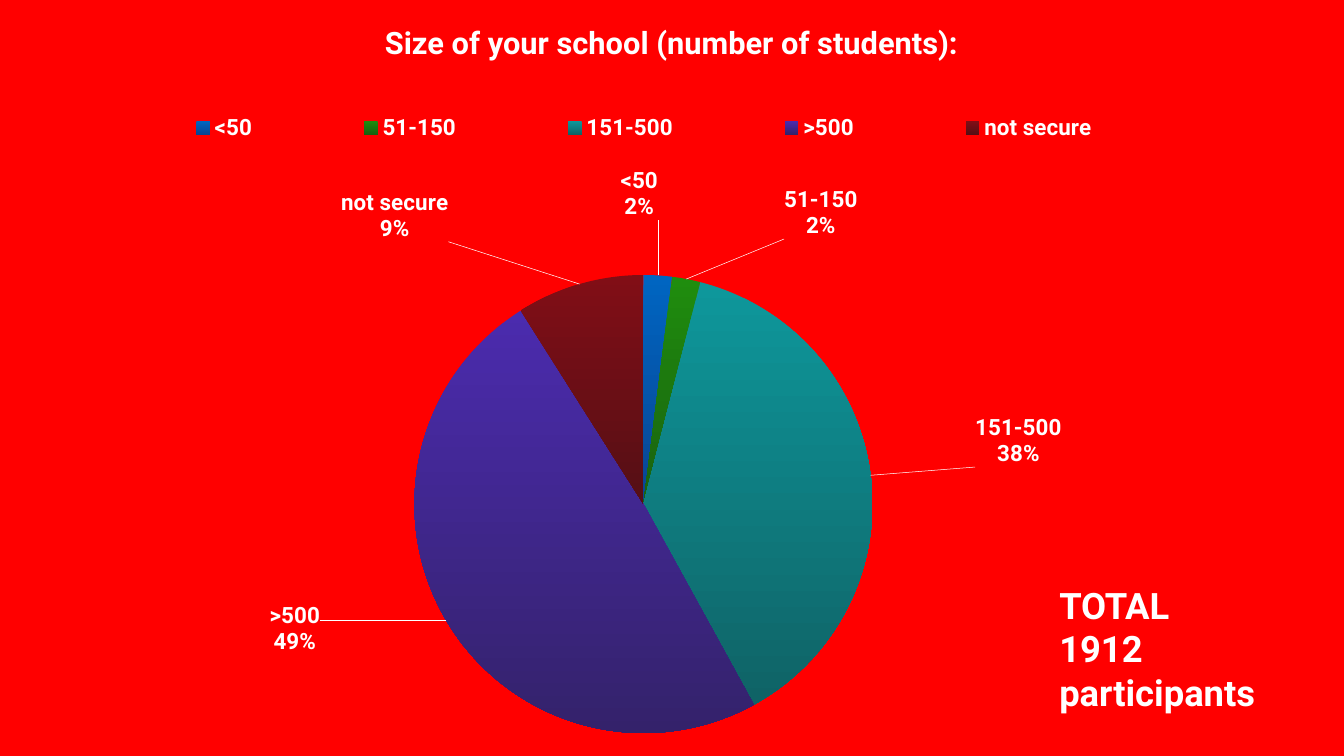
import copy

import pptx
import pptx.chart.data
import pptx.dml.color
import pptx.enum.chart
import pptx.enum.text
import pptx.oxml
import pptx.oxml.ns
import pptx.util
from pptx.util import Inches

FONT = "Roboto"
COLORS = {"background": "FF0000", "text": "FFFFFF"}
# category, percent, gradient from top to bottom, label shift as a part of the chart
SLICES = [
    ("<50", 2, ("0065C1", "094593"), (-0.017, -0.067)),
    ("51-150", 2, ("1F8D0E", "1A610F"), (0.088, -0.047)),
    ("151-500", 38, ("0E979B", "0F6366"), (0.092, -0.01)),
    (">500", 49, ("4B2BAE", "34226B"), (-0.112, -0.025)),
    ("not secure", 9, ("810E16", "550F15"), (-0.118, -0.05)),
]


def rgb(value):
    return pptx.dml.color.RGBColor.from_string(value)


def element(xml):
    """Parse chart XML written with the c: and a: prefixes."""
    tag, rest = xml[:-1].split(">", 1)
    declared = pptx.oxml.ns.nsdecls("c", "a")
    return pptx.oxml.parse_xml(f"{tag} {declared}>{rest}>")


def layout(x, y, w=None, h=None, inner=False, edge=True):
    parts = ['<c:layoutTarget val="inner"/>'] if inner else []
    if edge:
        parts += ['<c:xMode val="edge"/>', '<c:yMode val="edge"/>']
    for name, value in zip("xywh", (x, y, w, h)):
        if value is not None:
            parts.append(f'<c:{name} val="{value}"/>')
    return element(f"<c:layout><c:manualLayout>{''.join(parts)}</c:manualLayout></c:layout>")


class SlideBuilder:
    def __init__(self, slide):
        self.slide = slide

    def background(self, color):
        fill = self.slide.background.fill
        fill.solid()
        fill.fore_color.rgb = rgb(color)

    def style(self, font, size, bold=True):
        font.name = FONT
        font.size = pptx.util.Pt(size)
        font.bold = bold
        font.color.rgb = rgb(COLORS["text"])

    def text(self, box, lines, size, align, anchor):
        sp = self.slide.shapes.add_textbox(*map(Inches, box))
        tf = sp.text_frame
        tf.word_wrap = True
        tf.vertical_anchor = anchor
        tf.margin_left = tf.margin_right = Inches(0.06)
        tf.margin_top = tf.margin_bottom = Inches(0.06)
        for i, line in enumerate(lines):
            p = tf.add_paragraph() if i else tf.paragraphs[0]
            p.alignment = align
            r = p.add_run()
            r.text = line
            self.style(r.font, size)

    def pie(self, box, slices):
        data = pptx.chart.data.CategoryChartData()
        data.categories = [name for name, *_ in slices]
        data.add_series("Series 1", [value for _, value, *_ in slices])
        chart = self.slide.shapes.add_chart(
            pptx.enum.chart.XL_CHART_TYPE.PIE, *map(Inches, box), data).chart
        chart.has_title = False
        self.style(chart.font, 10, bold=False)
        plot = chart.plots[0]
        plot.vary_by_categories = True
        series = plot.series[0]
        for i, (_, _, gradient, _) in enumerate(slices):
            fmt = series.points[i].format
            fmt.line.fill.background()
            fmt.fill.gradient()
            fmt.fill.gradient_angle = 270
            for stop, color in zip(fmt.fill.gradient_stops, gradient):
                stop.color.rgb = rgb(color)
        self.legend(chart)
        self.pie_labels(chart, series.data_labels, [shift for *_, shift in slices])
        area = chart._chartSpace.xpath("c:chart/c:plotArea")[0]
        for old in area.xpath("c:layout"):
            area.remove(old)
        area.insert(0, layout(0.276, 0.211, 0.447, 0.58, inner=True))

    def legend(self, chart):
        chart.has_legend = True
        chart.legend.position = pptx.enum.chart.XL_LEGEND_POSITION.TOP
        chart.legend.include_in_layout = True
        self.style(chart.legend.font, 32)
        overlay = chart._chartSpace.xpath("c:chart/c:legend/c:overlay")[0]
        for old in chart._chartSpace.xpath("c:chart/c:legend/c:layout"):
            old.getparent().remove(old)
        overlay.addprevious(layout(0, 0, 1, 0.05))

    def pie_labels(self, chart, labels, shifts):
        """Show category and percent, each label moved off its slice with a leader line."""
        labels.show_value = False
        labels.show_category_name = True
        labels.show_percentage = True
        labels.number_format = "#,##0%"
        labels.number_format_is_linked = False
        labels.position = pptx.enum.chart.XL_LABEL_POSITION.OUTSIDE_END
        self.style(labels.font, 32)
        group = chart._chartSpace.xpath(".//c:ser/c:dLbls")[0]
        for old in group.xpath("c:showLeaderLines | c:leaderLines"):
            group.remove(old)
        group.append(element("<c:separator>\n</c:separator>"))
        shared = list(group)
        for i, (x, y) in enumerate(shifts):
            label = element(f'<c:dLbl><c:idx val="{i}"/></c:dLbl>')
            label.append(layout(x, y, edge=False))
            for child in shared:
                label.append(copy.deepcopy(child))
            group.insert(i, label)
        leader = element(
            '<c:dLbls><c:showLeaderLines val="1"/><c:leaderLines><c:spPr><a:ln w="9525">'
            f'<a:solidFill><a:srgbClr val="{COLORS["text"]}"/></a:solidFill>'
            "</a:ln></c:spPr></c:leaderLines></c:dLbls>")
        group.extend(list(leader))


def main():
    prs = pptx.Presentation()
    prs.slide_width, prs.slide_height = Inches(26.67), Inches(15)
    s = SlideBuilder(prs.slides.add_slide(prs.slide_layouts[6]))
    align, anchor = pptx.enum.text.PP_ALIGN, pptx.enum.text.MSO_ANCHOR
    s.background(COLORS["background"])
    s.text((2.6, 0.42, 21.46, 1.74), ["Size of your school (number of students):"],
           44, align.CENTER, anchor.TOP)
    s.pie((1.82, 2.15, 21.92, 15.67), SLICES)
    s.text((20.96, 11.49, 5.55, 2.74), ["TOTAL", "1912 participants"],
           52, align.LEFT, anchor.MIDDLE)
    prs.save("out.pptx")


if __name__ == "__main__":
    main()
